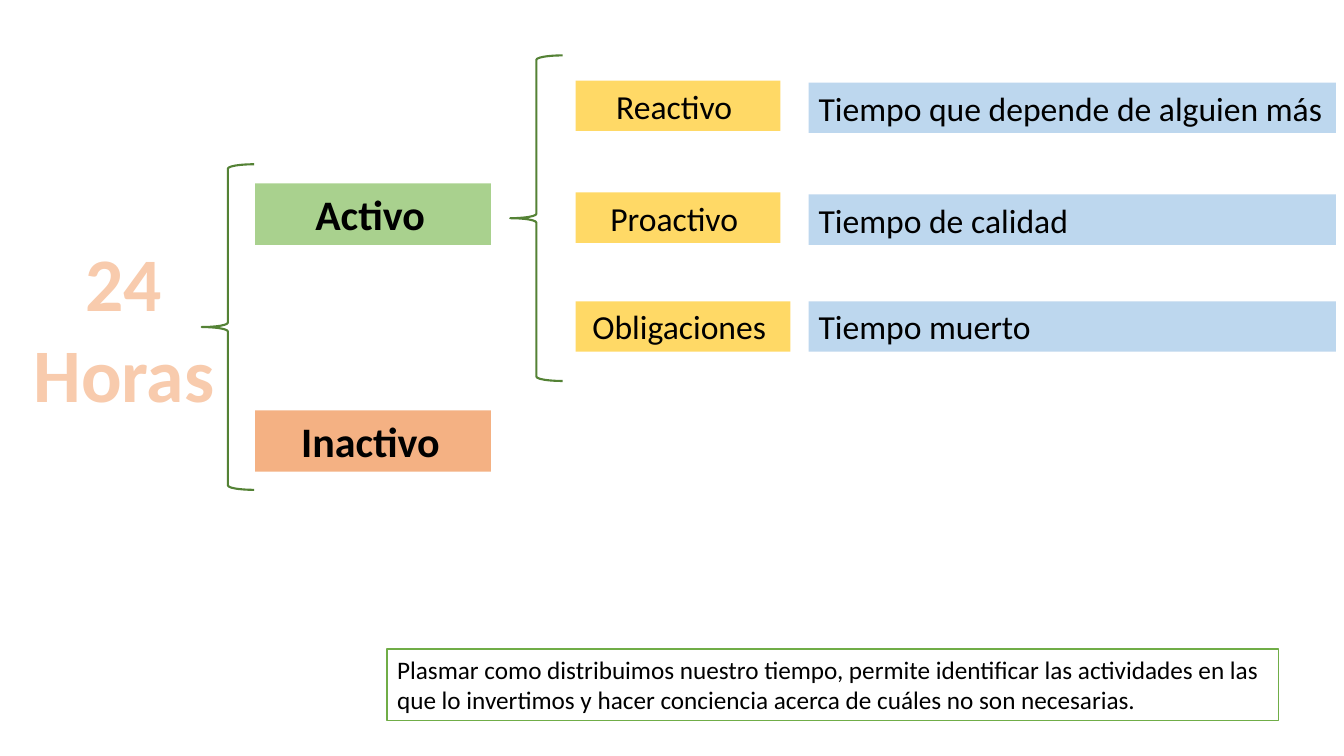
from dataclasses import dataclass

from pptx import Presentation
from pptx.dml.color import RGBColor
from pptx.enum.shapes import MSO_SHAPE as Shape
from pptx.enum.text import MSO_ANCHOR as Anchor, MSO_AUTO_SIZE as AutoSize, PP_ALIGN as Align
from pptx.util import Emu, Pt

PX = 9144  # EMU per px, 100 px to the inch
TITLE_ONLY = 5


@dataclass(frozen=True)
class Theme:
    font: str = "Calibri"
    text: str = "000000"
    paper: str = "FFFFFF"
    title: str = "F8CBAD"
    active: str = "A9D18E"
    inactive: str = "F4B183"
    kind: str = "FFD966"
    meaning: str = "BDD7EE"
    brace: str = "548235"
    note_line: str = "70AD47"
    title_size: int = 54
    state_size: int = 30
    label_size: int = 24
    note_size: int = 18
    brace_width: float = 1.5
    note_width: float = 1


THEME = Theme()

TIME_KINDS = [
    # label, label width, label top, meaning, meaning top
    ("Reactivo ", 203, 80, "Tiempo que depende de alguien más", 82),
    ("Proactivo ", 203, 191, "Tiempo de calidad", 193),
    ("Obligaciones ", 213, 299, "Tiempo muerto", 299),
]


def px(*lengths):
    return [Emu(length * PX) for length in lengths]


def add_run(paragraph, text, size, color=THEME.text, bold=False):
    run = paragraph.add_run()
    run.text = text
    run.font.name = THEME.font
    run.font.size = Pt(size)
    run.font.bold = bold
    run.font.color.rgb = RGBColor.from_string(color)


def add_plain_shape(slide, kind, box, fill=None, line=None, line_width=0):
    shape = slide.shapes.add_shape(kind, *px(*box))
    shape.shadow.inherit = False
    if fill:
        shape.fill.solid()
        shape.fill.fore_color.rgb = RGBColor.from_string(fill)
    else:
        shape.fill.background()
    if line:
        shape.line.color.rgb = RGBColor.from_string(line)
        shape.line.width = Pt(line_width)
    else:
        shape.line.fill.background()
    return shape


def add_label(slide, box, runs, fill, align=Align.LEFT, **line):
    """Add a filled rectangle; runs are (text, size, bold) triples."""
    shape = add_plain_shape(slide, Shape.RECTANGLE, box, fill, **line)
    frame = shape.text_frame
    frame.word_wrap = True
    frame.vertical_anchor = Anchor.TOP
    paragraph = frame.paragraphs[0]
    paragraph.alignment = align
    for text, size, bold in runs:
        add_run(paragraph, text, size, bold=bold)


def add_state(slide, top, name, fill, space_size):
    runs = [(name, THEME.state_size, True), (" ", space_size, False)]
    add_label(slide, (253, top, 234, 61), runs, fill, Align.CENTER)


def add_brace(slide, left, top):
    add_plain_shape(slide, Shape.LEFT_BRACE, (left, top, 52, 323),
                    line=THEME.brace, line_width=THEME.brace_width)


def fill_title(slide, text, box):
    title = slide.shapes.title
    title.left, title.top, title.width, title.height = px(*box)
    frame = title.text_frame
    frame.word_wrap = True
    frame.auto_size = AutoSize.NONE
    frame.vertical_anchor = Anchor.TOP
    paragraph = frame.paragraphs[0]
    paragraph.alignment = Align.CENTER
    add_run(paragraph, text, THEME.title_size, THEME.title, bold=True)


def main():
    presentation = Presentation()
    presentation.slide_width, presentation.slide_height = px(1333, 750)
    slide = presentation.slides.add_slide(presentation.slide_layouts[TITLE_ONLY])

    fill_title(slide, "24 Horas", (16, 229, 214, 192))
    add_state(slide, 182, "Activo", THEME.active, space_size=18)
    add_state(slide, 407, "Inactivo", THEME.inactive, space_size=16)

    for kind, width, kind_top, meaning, meaning_top in TIME_KINDS:
        add_label(slide, (571, kind_top, width, 50),
                  [(kind, THEME.label_size, False)], THEME.kind, Align.CENTER)
        add_label(slide, (802, meaning_top, 523, 50),
                  [(meaning, THEME.label_size, False)], THEME.meaning)

    note = ("Plasmar como distribuimos nuestro tiempo, permite identificar las "
            "actividades en las que lo invertimos y hacer conciencia acerca de "
            "cuáles no son necesarias.")
    add_label(slide, (384, 644, 884, 71), [(note, THEME.note_size, False)],
              THEME.paper, line=THEME.note_line, line_width=THEME.note_width)

    add_brace(slide, 200, 163)
    add_brace(slide, 506, 55)
    presentation.save("out.pptx")


if __name__ == "__main__":
    main()
